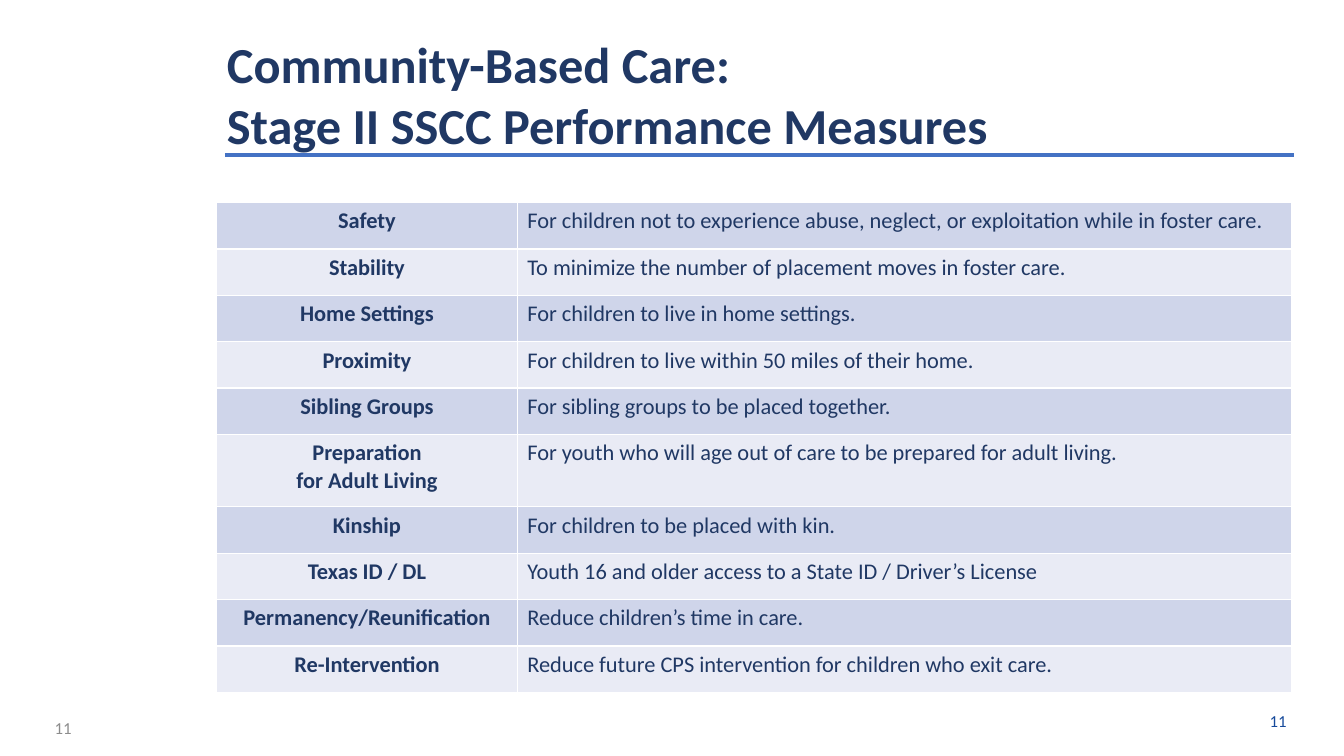
"""Build the slide of Stage II SSCC performance measures."""
from lxml import etree
from pptx import Presentation
from pptx import util as u
from pptx.dml.color import RGBColor
from pptx.enum import shapes, text
from pptx.oxml import ns

THEME = {
    "font": "Calibri", "title_size": 36, "table_size": 16, "number_size": 12,
    "navy": "203864", "rule": "4472C4", "grey": "8C8C8C", "blue": "164A9B",
    "bands": ("CFD5EA", "E9EBF5"), "border": "FFFFFF",
}
TABLE_LEFT, TABLE_TOP = 2.15, 2.01
COLUMN_WIDTHS = (2.98, 7.68)
LINE_HEIGHT, ROW_PADDING = 0.26, 0.2
MEASURES = [
    ("Safety", "For children not to experience abuse, neglect, or exploitation while in foster care."),
    ("Stability", "To minimize the number of placement moves in foster care."),
    ("Home Settings", "For children to live in home settings."),
    ("Proximity", "For children to live within 50 miles of their home."),
    ("Sibling Groups", "For sibling groups to be placed together."),
    ("Preparation\nfor Adult Living", "For youth who will age out of care to be prepared for adult living."),
    ("Kinship", "For children to be placed with kin."),
    ("Texas ID / DL", "Youth 16 and older access to a State ID / Driver’s License"),
    ("Permanency/Reunification", "Reduce children’s time in care."),
    ("Re-Intervention", "Reduce future CPS intervention for children who exit care."),
]


def write(frame, words, size, color, bold, alignment):
    """Fill a text frame and format each of its paragraphs."""
    frame.text = words
    for paragraph in frame.paragraphs:
        paragraph.alignment = alignment
        settings = {"name": THEME["font"], "size": u.Pt(size), "bold": bold}
        for name, value in settings.items():
            setattr(paragraph.font, name, value)
        paragraph.font.color.rgb = RGBColor.from_string(color)


def add_borders(cell):
    """Draw a thin line on the four sides of a table cell."""
    properties = cell._tc.get_or_add_tcPr()
    for index, side in enumerate(("a:lnL", "a:lnR", "a:lnT", "a:lnB")):
        line = etree.Element(ns.qn(side), w=str(u.Pt(1)))
        fill = etree.SubElement(line, ns.qn("a:solidFill"))
        etree.SubElement(fill, ns.qn("a:srgbClr"), val=THEME["border"])
        properties.insert(index, line)


presentation = Presentation()
presentation.slide_width = u.Inches(13.33)
presentation.slide_height = u.Inches(7.5)
slide = presentation.slides.add_slide(presentation.slide_layouts[5])

rule = slide.shapes.add_connector(
    shapes.MSO_CONNECTOR.STRAIGHT,
    u.Inches(2.23), u.Inches(1.54), u.Inches(12.83), u.Inches(1.54))
rule.line.color.rgb = RGBColor.from_string(THEME["rule"])
rule.line.width = u.Pt(3)
etree.SubElement(rule._element.spPr, ns.qn("a:effectLst"))

title = slide.shapes.title
title_box = {"left": TABLE_LEFT, "top": 0.28, "width": 11.18, "height": 1.31}
for name, value in title_box.items():
    setattr(title, name, u.Inches(value))
title.text_frame.auto_size = text.MSO_AUTO_SIZE.NONE
title.text_frame.vertical_anchor = text.MSO_ANCHOR.TOP
write(title.text_frame, "Community-Based Care:\nStage II SSCC Performance Measures",
      THEME["title_size"], THEME["navy"], True, text.PP_ALIGN.LEFT)

row_heights = [ROW_PADDING + LINE_HEIGHT * len(measure.split("\n")) for measure, goal in MEASURES]
table = slide.shapes.add_table(
    len(MEASURES), len(COLUMN_WIDTHS), u.Inches(TABLE_LEFT), u.Inches(TABLE_TOP),
    u.Inches(sum(COLUMN_WIDTHS)), u.Inches(sum(row_heights))).table
table.first_row = False
table.horz_banding = False
for column, width in zip(table.columns, COLUMN_WIDTHS):
    column.width = u.Inches(width)
for row_index, (row, height) in enumerate(zip(table.rows, row_heights)):
    row.height = u.Inches(height)
    for column_index, cell in enumerate(row.cells):
        is_measure = column_index == 0
        alignment = text.PP_ALIGN.CENTER if is_measure else text.PP_ALIGN.LEFT
        write(cell.text_frame, MEASURES[row_index][column_index],
              THEME["table_size"], THEME["navy"], is_measure, alignment)
        cell.fill.solid()
        cell.fill.fore_color.rgb = RGBColor.from_string(THEME["bands"][row_index % 2])
        add_borders(cell)

for left, top, color in ((0.01, 7.02, THEME["grey"]), (12.06, 6.95, THEME["blue"])):
    number = slide.shapes.add_textbox(u.Inches(left), u.Inches(top), u.Inches(0.8), u.Inches(0.4))
    number.text_frame.word_wrap = True
    number.text_frame.vertical_anchor = text.MSO_ANCHOR.MIDDLE
    write(number.text_frame, "11", THEME["number_size"], color, False, text.PP_ALIGN.RIGHT)

presentation.save("out.pptx")
